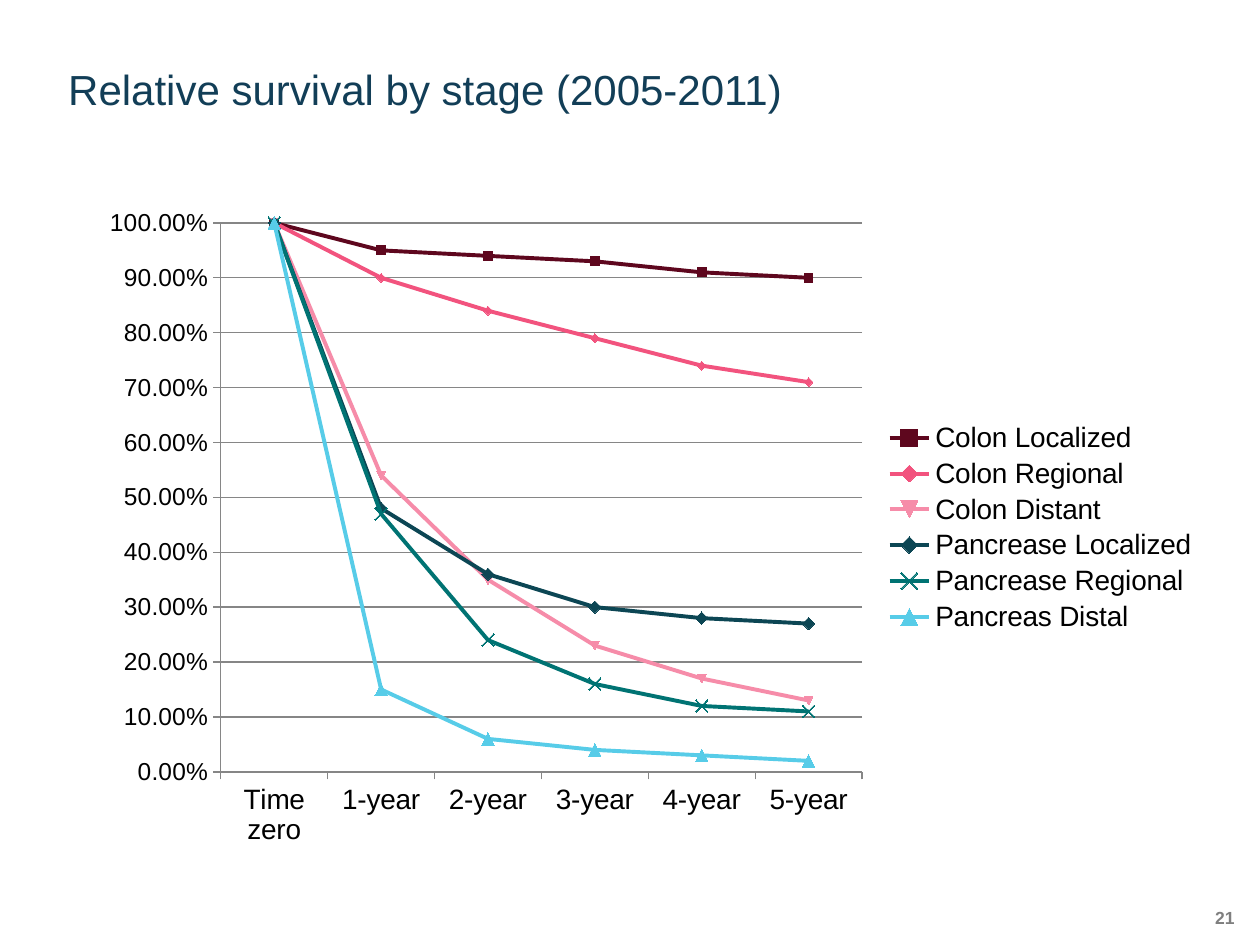
from lxml.etree import SubElement
from pptx import Presentation
from pptx.chart.data import CategoryChartData
from pptx.dml.color import RGBColor
from pptx.enum.chart import XL_CHART_TYPE, XL_LEGEND_POSITION, XL_MARKER_STYLE, XL_TICK_MARK
from pptx.enum.text import MSO_ANCHOR, PP_ALIGN
from pptx.oxml.ns import qn
from pptx.util import Pt

AUTO = XL_MARKER_STYLE.AUTOMATIC
YEARS = ["Time zero", "1-year", "2-year", "3-year", "4-year", "5-year"]
SURVIVAL = [
    ("Colon Localized", [1, 0.95, 0.94, 0.93, 0.91, 0.9], "5E071E", AUTO, 5),
    ("Colon Regional", [1, 0.9, 0.84, 0.79, 0.74, 0.71], "F2537E", AUTO, 5),
    ("Colon Distant", [1, 0.54, 0.35, 0.23, 0.17, 0.13], "F68CA9", AUTO, 5),
    ("Pancrease Localized", [1, 0.48, 0.36, 0.3, 0.28, 0.27], "0C4654", XL_MARKER_STYLE.DIAMOND, 7),
    ("Pancrease Regional", [1, 0.47, 0.24, 0.16, 0.12, 0.11], "007373", XL_MARKER_STYLE.X, 7),
    ("Pancreas Distal", [1, 0.15, 0.06, 0.04, 0.03, 0.02], "57CCE8", XL_MARKER_STYLE.TRIANGLE, 7),
]
PLOT_LAYOUT = {"layoutTarget": "inner", "xMode": "edge", "yMode": "edge",
               "x": 0.12, "y": 0.04, "w": 0.57, "h": 0.83}


def rgb(value):
    return RGBColor.from_string(value)


class Deck:
    """Hold the slide style and add elements to the current slide."""

    font, ink, rule = "Arial", "000000", "868686"

    def __init__(self, prs):
        self.s = prs.slides.add_slide(prs.slide_layouts[6])

    def style(self, font, size, color, bold=False):
        font.name, font.size, font.bold = self.font, Pt(size), bold
        font.color.rgb = rgb(color)

    def line(self, fmt, color, width):
        fmt.color.rgb = rgb(color)
        fmt.width = Pt(width)

    def title(self, text, box):
        s = self.s
        layout = s.slide_layout
        return self.text(text, box, 24, "123E57", anchor=MSO_ANCHOR.BOTTOM, spacing=0.9)

    def text(self, text, box, size, color, bold=False, align=PP_ALIGN.LEFT,
             anchor=MSO_ANCHOR.TOP, spacing=1.0):
        tf = self.s.shapes.add_textbox(*map(Pt, box)).text_frame
        tf.margin_left = tf.margin_right = tf.margin_top = tf.margin_bottom = 0
        tf.word_wrap, tf.vertical_anchor = True, anchor
        tf.text = text
        p = tf.paragraphs[0]
        p.alignment, p.line_spacing = align, spacing
        self.style(p.runs[0].font, size, color, bold)

    def axis(self, axis, size):
        axis.major_tick_mark = XL_TICK_MARK.OUTSIDE
        axis.minor_tick_mark = XL_TICK_MARK.NONE
        self.style(axis.tick_labels.font, size, self.ink)
        self.line(axis.format.line, self.rule, 0.75)

    def place_plot(self, chart):
        plot_area = chart.element.find(".//" + qn("c:plotArea"))
        for old in plot_area.findall(qn("c:layout")):
            plot_area.remove(old)
        layout = SubElement(plot_area, qn("c:layout"))
        plot_area.insert(0, layout)
        manual = SubElement(layout, qn("c:manualLayout"))
        for name, value in PLOT_LAYOUT.items():
            SubElement(manual, qn("c:" + name)).set("val", str(value))

    def line_chart(self, categories, rows, box):
        data = CategoryChartData(number_format="0.00%")
        data.categories = categories
        for name, values, *_ in rows:
            data.add_series(name, values)
        chart = self.s.shapes.add_chart(
            XL_CHART_TYPE.LINE_MARKERS, *map(Pt, box), data).chart
        self.style(chart.font, 10, "606060")
        chart.has_title = False
        chart.has_legend = True
        chart.legend.position = XL_LEGEND_POSITION.RIGHT
        chart.legend.include_in_layout = False
        self.style(chart.legend.font, 16, self.ink)
        self.axis(chart.category_axis, 16)
        values = chart.value_axis
        self.axis(values, 14)
        values.minimum_scale, values.maximum_scale, values.major_unit = 0, 1, 0.1
        values.tick_labels.number_format = "0.00%"
        values.tick_labels.number_format_is_linked = False
        values.has_major_gridlines = True
        self.line(values.major_gridlines.format.line, self.rule, 0.75)
        chart.plots[0].vary_by_categories = False
        for series, (_, _, color, marker, size) in zip(chart.plots[0].series, rows):
            series.smooth = False
            self.line(series.format.line, color, 2.25)
            series.marker.style, series.marker.size = marker, size
            series.marker.format.fill.solid()
            series.marker.format.fill.fore_color.rgb = rgb(color)
            self.line(series.marker.format.line, color, 0.75)
        self.place_plot(chart)


def main():
    prs = Presentation()
    prs.slide_width, prs.slide_height = Pt(720), Pt(540)
    deck = Deck(prs)
    deck.text("21", (681, 518.4, 24.5, 14.4), 10, "7F7F7F", bold=True, align=PP_ALIGN.RIGHT)
    deck.title("Relative survival by stage (2005-2011)", (39, 32.4, 643, 33))
    deck.line_chart(YEARS, SURVIVAL, (49, 112.3, 643, 378))
    prs.save("out.pptx")


if __name__ == "__main__":
    main()
